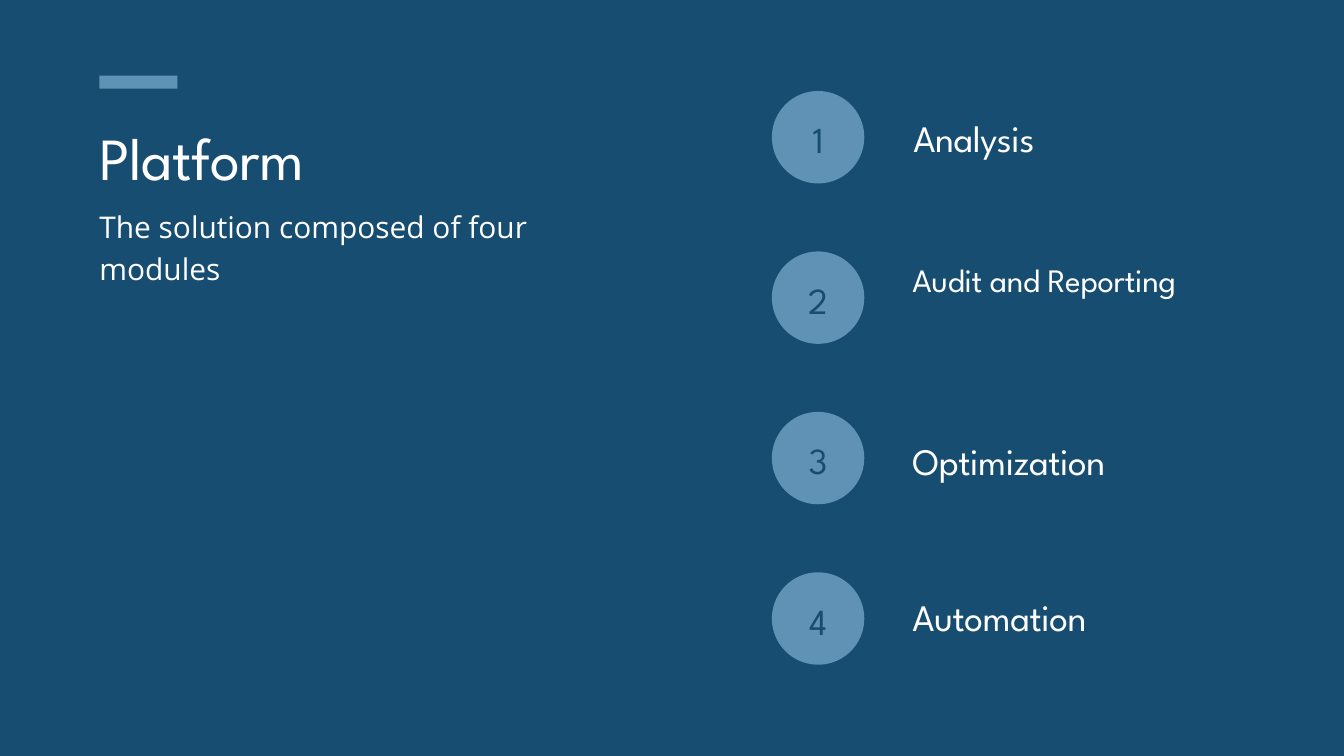
from dataclasses import dataclass

from pptx import Presentation
from pptx.dml.color import RGBColor
from pptx.enum.shapes import MSO_SHAPE
from pptx.enum.text import MSO_AUTO_SIZE, PP_ALIGN
from pptx.slide import Slide
from pptx.util import Pt

RECTANGLE = MSO_SHAPE.RECTANGLE
OVAL = MSO_SHAPE.OVAL
GROW = MSO_AUTO_SIZE.SHAPE_TO_FIT_TEXT
LEFT = PP_ALIGN.LEFT
CENTER = PP_ALIGN.CENTER

NAVY = "184D72"
STEEL = "5F92B4"
WHITE = "FFFFFF"
HEADING_FONT = "League Spartan"
BODY_FONT = "Open Sans"

MARGIN = 106.5
BADGE_LEFT = 827
BADGE_TOP = 97.5
BADGE_SIZE = 99
BADGE_PITCH = 171.9
NUMBER_LEFT = 851
NUMBER_TOP = 121.5


@dataclass(frozen=True)
class TextStyle:
    size: float
    line: float
    tracking: float = 0
    font: str = HEADING_FONT
    color: str = WHITE
    align: PP_ALIGN = LEFT


@dataclass(frozen=True)
class Module:
    name: str
    left: float
    top: float
    height: float
    style: TextStyle


TITLE = TextStyle(64, 83.2, -0.6)
SUBTITLE = TextStyle(32, 45.4, font=BODY_FONT)
NUMBER = TextStyle(39.3, 51.1, -0.4, color=NAVY, align=CENTER)
LABEL = TextStyle(40, 52, -0.4)
SMALL_LABEL = TextStyle(35, 45.5, -0.3)

MODULES = [
    Module("Analysis", 978.5, 119.5, 52, LABEL),
    Module("Audit and Reporting", 977.5, 274.5, 88.5, SMALL_LABEL),
    Module("Optimization", 977.5, 465, 52, LABEL),
    Module("Automation", 977.5, 633, 52, LABEL),
]


def rgb(value: str) -> RGBColor:
    """Turn a hex string into a colour."""
    return RGBColor.from_string(value)


def add_block(page: Slide, kind: MSO_SHAPE, left: float, top: float,
              width: float, height: float) -> None:
    """Draw a flat steel-blue shape without outline."""
    block = page.shapes.add_shape(kind, Pt(left), Pt(top), Pt(width), Pt(height))
    block.shadow.inherit = False
    block.fill.solid()
    block.fill.fore_color.rgb = rgb(STEEL)
    block.line.fill.background()


def add_text(page: Slide, text: str, left: float, top: float,
             width: float, height: float, style: TextStyle) -> None:
    """Place one styled paragraph in a box without insets."""
    box = page.shapes.add_textbox(Pt(left), Pt(top), Pt(width), Pt(height))
    frame = box.text_frame
    frame.margin_left = frame.margin_right = 0
    frame.margin_top = frame.margin_bottom = 0
    frame.word_wrap = True
    frame.auto_size = GROW
    para = frame.paragraphs[0]
    para.text = text
    para.alignment = style.align
    para.line_spacing = Pt(style.line)
    para.font.size = Pt(style.size)
    para.font.name = style.font
    para.font.color.rgb = rgb(style.color)
    if style.tracking:
        defaults = para._p.get_or_add_pPr().get_or_add_defRPr()
        defaults.set("spc", str(round(style.tracking * 100)))


def add_module(page: Slide, index: int, module: Module) -> None:
    """Draw a numbered badge and the module name beside it."""
    shift = index * BADGE_PITCH
    add_block(page, OVAL, BADGE_LEFT, BADGE_TOP + shift, BADGE_SIZE, BADGE_SIZE)
    add_text(page, str(index + 1), NUMBER_LEFT, NUMBER_TOP + shift, 51, 49, NUMBER)
    add_text(page, module.name, module.left, module.top, 334, module.height,
             module.style)


def main() -> None:
    """Build and save the platform slide."""
    deck = Presentation()
    deck.slide_width, deck.slide_height = Pt(1440), Pt(810)
    page = deck.slides.add_slide(deck.slide_layouts[6])
    page.background.fill.solid()
    page.background.fill.fore_color.rgb = rgb(NAVY)

    add_text(page, "Platform", MARGIN, 123, 535, 80, TITLE)
    add_text(page, "The solution composed of four modules", MARGIN, 216.5, 535, 88,
             SUBTITLE)
    add_block(page, RECTANGLE, MARGIN, 81, 83.5, 14)
    for index, module in enumerate(MODULES):
        add_module(page, index, module)
    deck.save("out.pptx")


if __name__ == "__main__":
    main()
